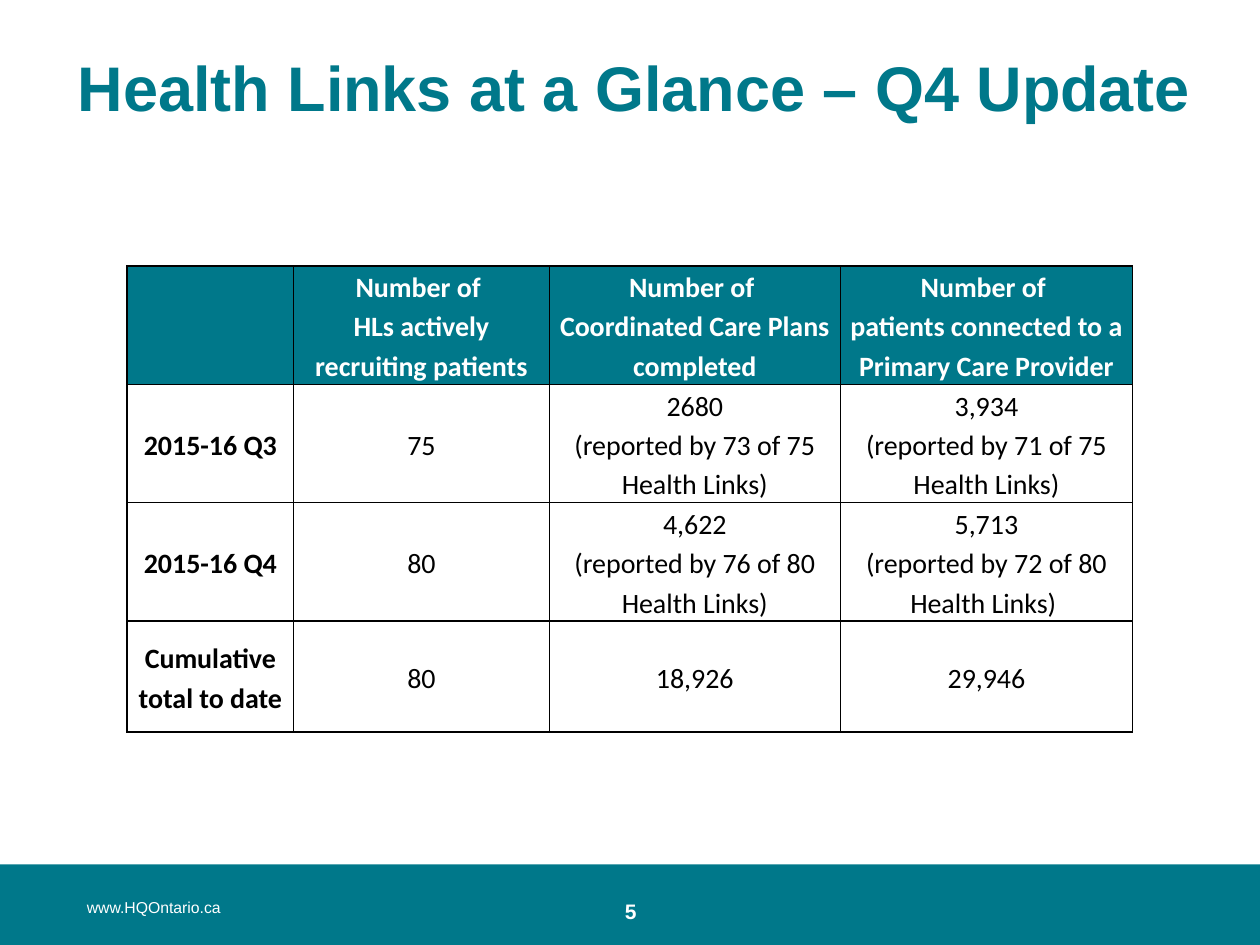
from typing import NamedTuple

from lxml import etree
from pptx import Presentation
from pptx.dml.color import RGBColor
from pptx.enum.shapes import MSO_SHAPE
from pptx.enum.text import MSO_ANCHOR, PP_ALIGN
from pptx.oxml.ns import qn
from pptx.util import Inches, Pt

RECTANGLE = MSO_SHAPE.RECTANGLE
TOP, MIDDLE = MSO_ANCHOR.TOP, MSO_ANCHOR.MIDDLE
LEFT, CENTER = PP_ALIGN.LEFT, PP_ALIGN.CENTER

TEAL = RGBColor(0x00, 0x78, 0x8A)
WHITE = RGBColor(0xFF, 0xFF, 0xFF)
BLACK = RGBColor(0x00, 0x00, 0x00)

COLUMN_WIDTHS = [1.32, 2.03, 2.31, 2.32]
ROW_HEIGHTS = [0.94, 0.94, 0.94, 0.88]
TABLE_ROWS = [
    [
        [],
        ["Number of ", "HLs actively recruiting patients"],
        ["Number of ", "Coordinated Care Plans completed"],
        ["Number of ", "patients connected to a", "Primary Care Provider"],
    ],
    [
        ["2015-16 Q3"],
        ["75"],
        ["2680", "(reported by 73 of 75 Health Links)"],
        ["3,934", "(reported by 71 of 75 Health Links)"],
    ],
    [
        ["2015-16 Q4"],
        ["80"],
        ["4,622", "(reported by 76 of 80 Health Links)"],
        ["5,713", "(reported by 72 of 80 Health Links) "],
    ],
    [["Cumulative total to date"], ["80"], ["18,926"], ["29,946"]],
]


class TextStyle(NamedTuple):
    font: str
    size: float
    color: RGBColor
    bold: bool = False
    alignment: PP_ALIGN = CENTER


class FooterText(NamedTuple):
    text: str
    left: float
    width: float
    height: float
    style: TextStyle


TITLE_STYLE = TextStyle("Arial", 36, TEAL, True)
HEADER_STYLE = TextStyle("Calibri", 16, WHITE, True)
LABEL_STYLE = TextStyle("Calibri", 16, BLACK, True)
VALUE_STYLE = TextStyle("Calibri", 16, BLACK)
FOOTER_TOP = 7.08
FOOTER_TEXTS = [
    FooterText("5", 4.42, 1.17, 0.3, TextStyle("Arial", 12, WHITE, True)),
    FooterText("www.HQOntario.ca", 0.59, 3.08, 0.27,
               TextStyle("Arial", 9, WHITE, alignment=LEFT)),
]


def write_lines(text_frame, lines: list[str], style: TextStyle,
                line_spacing: float = 1.0) -> None:
    for index, line in enumerate(lines):
        paragraph = text_frame.add_paragraph() if index else text_frame.paragraphs[0]
        paragraph.alignment = style.alignment
        paragraph.line_spacing = line_spacing
        run = paragraph.add_run()
        run.text = line
        run.font.name = style.font
        run.font.size = Pt(style.size)
        run.font.bold = style.bold
        run.font.color.rgb = style.color


def add_borders(cell) -> None:
    """Border elements must come before the fill in the cell properties."""
    properties = cell._tc.get_or_add_tcPr()
    for index, side in enumerate(("lnL", "lnR", "lnT", "lnB")):
        line = etree.Element(qn(f"a:{side}"), w=str(Pt(1)))
        fill = etree.SubElement(line, qn("a:solidFill"))
        etree.SubElement(fill, qn("a:srgbClr"), val=str(BLACK))
        properties.insert(index, line)


def add_title(slide) -> None:
    title = slide.shapes.title
    title.left, title.top = Inches(0.5), Inches(0.3)
    title.width, title.height = Inches(9.07), Inches(0.77)
    title.text_frame.vertical_anchor = MIDDLE
    write_lines(title.text_frame, ["Health Links at a Glance – Q4 Update"], TITLE_STYLE)


def add_results_table(slide) -> None:
    table = slide.shapes.add_table(
        len(ROW_HEIGHTS), len(COLUMN_WIDTHS), Inches(1.01), Inches(2.11),
        Inches(sum(COLUMN_WIDTHS)), Inches(sum(ROW_HEIGHTS))).table
    table.horz_banding = False
    for column, width in zip(table.columns, COLUMN_WIDTHS):
        column.width = Inches(width)
    for row, height in zip(table.rows, ROW_HEIGHTS):
        row.height = Inches(height)
    for row_index, row_texts in enumerate(TABLE_ROWS):
        for column_index, lines in enumerate(row_texts):
            cell = table.cell(row_index, column_index)
            is_header = row_index == 0
            cell.fill.solid()
            cell.fill.fore_color.rgb = TEAL if is_header else WHITE
            cell.vertical_anchor = TOP if is_header else MIDDLE
            cell.margin_left = cell.margin_right = Inches(0.07)
            cell.margin_top = cell.margin_bottom = 0
            if is_header:
                style = HEADER_STYLE
            else:
                style = VALUE_STYLE if column_index else LABEL_STYLE
            write_lines(cell.text_frame, lines, style, 1.15)
            add_borders(cell)


def add_footer(slide) -> None:
    band = slide.shapes.add_shape(
        RECTANGLE, 0, Inches(6.86), Inches(10.04), Inches(0.67))
    band.shadow.inherit = False
    band.fill.solid()
    band.fill.fore_color.rgb = TEAL
    band.line.fill.background()
    for item in FOOTER_TEXTS:
        box = slide.shapes.add_textbox(Inches(item.left), Inches(FOOTER_TOP),
                                       Inches(item.width), Inches(item.height))
        box.text_frame.word_wrap = True
        write_lines(box.text_frame, [item.text], item.style)


def main() -> None:
    presentation = Presentation()
    presentation.slide_width, presentation.slide_height = Inches(10), Inches(7.5)
    title_only_layout = presentation.slide_layouts[5]
    slide = presentation.slides.add_slide(title_only_layout)
    add_footer(slide)
    add_title(slide)
    add_results_table(slide)
    presentation.save("out.pptx")


if __name__ == "__main__":
    main()
